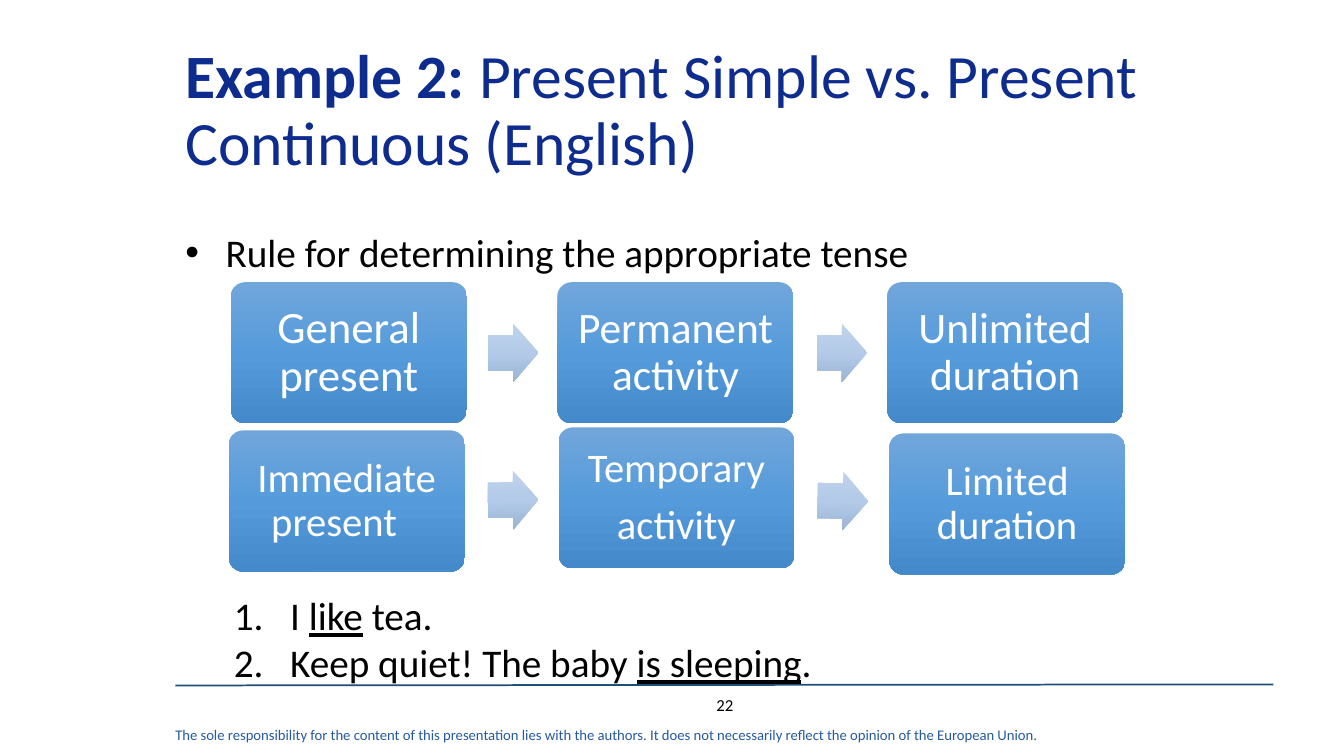
from copy import deepcopy

from lxml import etree
from pptx import Presentation
from pptx.dml.color import RGBColor
from pptx.enum.shapes import MSO_CONNECTOR, MSO_SHAPE
from pptx.enum.text import MSO_ANCHOR, MSO_AUTO_SIZE, PP_ALIGN
from pptx.oxml.ns import qn
from pptx.util import Inches, Pt

ROUND = MSO_SHAPE.ROUNDED_RECTANGLE
ARROW = MSO_SHAPE.RIGHT_ARROW
STRAIGHT = MSO_CONNECTOR.STRAIGHT
TOP, MIDDLE = MSO_ANCHOR.TOP, MSO_ANCHOR.MIDDLE
LEFT, CENTER = PP_ALIGN.LEFT, PP_ALIGN.CENTER
NO_FIT = MSO_AUTO_SIZE.NONE

FONT = "Calibri"
NAVY = RGBColor(0x0E, 0x2C, 0x8E)
RULE = RGBColor(0x1F, 0x4E, 0x79)
NOTE = RGBColor(0x27, 0x5A, 0x9F)
BLACK = RGBColor(0, 0, 0)
WHITE = RGBColor(0xFF, 0xFF, 0xFF)
CARD = [RGBColor(0x71, 0xA6, 0xDB), RGBColor(0x55, 0x9B, 0xDB), RGBColor(0x44, 0x8A, 0xCA)]
PALE = [RGBColor(0xC0, 0xD2, 0xEB), RGBColor(0xB3, 0xCB, 0xE9), RGBColor(0x9B, 0xB4, 0xD3)]

CARD_W, CARD_H = 2.34, 1.4
ARROW_W, ARROW_H = 0.5, 0.58

GENERAL = (
    [(2.29, 2.8, 32, ["General present"]),
     (5.53, 2.8, 31, ["Permanent activity"]),
     (8.8, 2.8, 31, ["Unlimited duration"])],
    [(4.84, 3.21, 0), (8.1, 3.21, 0)],
)
IMMEDIATE = (
    [(2.27, 4.27, 29, ["Immediate present\t"]),
     (5.54, 4.24, 29, ["Temporary", "activity"]),
     (8.82, 4.3, 29, ["Limited duration"])],
    [(4.84, 4.67, -0.6), (8.11, 4.68, 1.1)],
)


def inches(box):
    """Turn a box of numbers into lengths."""
    return [Inches(n) for n in box]


def add_run(para, text, size, color, bold=False, under=False):
    """Add one formatted run to a paragraph."""
    run = para.add_run()
    run.text = text
    font = run.font
    font.name, font.size, font.bold = FONT, Pt(size), bold
    font.underline = under
    font.color.rgb = color


def add_box(slide, box, anchor=TOP):
    """Add a wrapping text box and return its frame."""
    frame = slide.shapes.add_textbox(*inches(box)).text_frame
    frame.word_wrap = True
    frame.vertical_anchor = anchor
    return frame


def add_mark(para, indent, tag, **attrs):
    """Give a paragraph a hanging bullet or number."""
    props = para._p.get_or_add_pPr()
    props.set("marL", str(Inches(indent)))
    props.set("indent", str(-Inches(indent)))
    etree.SubElement(props, qn("a:buFont"), typeface="Arial" if tag == "a:buChar" else FONT)
    etree.SubElement(props, qn(tag), **attrs)


def add_shape(slide, kind, box, colors):
    """Add a preset shape with a vertical gradient."""
    shape = slide.shapes.add_shape(kind, *inches(box))
    shape.shadow.inherit = False
    shape.line.fill.background()
    fill = shape.fill
    fill.gradient()
    fill.gradient_angle = 270
    stops = shape._element.spPr.find(".//" + qn("a:gsLst"))
    stops.insert(1, deepcopy(stops[0]))
    for stop, place, color in zip(fill.gradient_stops, (0, 0.5, 1), colors):
        stop.position = place
        stop.color.rgb = color
    return shape


def add_card(slide, box, size, texts):
    """Add one rounded card with centred text."""
    card = add_shape(slide, ROUND, box, CARD)
    card.adjustments[0] = 0.1
    frame = card.text_frame
    frame.word_wrap = True
    frame.vertical_anchor = MIDDLE
    frame.margin_left = frame.margin_right = Inches(0.12)
    frame.margin_top = frame.margin_bottom = Inches(0.12)
    for i, text in enumerate(texts):
        para = frame.add_paragraph() if i else frame.paragraphs[0]
        para.alignment = CENTER
        para.line_spacing = 0.9
        para.space_after = Pt(round(size * 0.35))
        add_run(para, text, size, WHITE)


def add_flow(slide, cards, arrows):
    """Add a row of cards joined by block arrows."""
    for left, top, size, texts in cards:
        add_card(slide, (left, top, CARD_W, CARD_H), size, texts)
    for left, top, turn in arrows:
        arrow = add_shape(slide, ARROW, (left, top, ARROW_W, ARROW_H), PALE)
        arrow.adjustments[0], arrow.adjustments[1] = 0.6, 0.5
        arrow.rotation = turn


def add_title(slide, box):
    """Place and fill the title."""
    title = slide.shapes.title
    title.left, title.top, title.width, title.height = inches(box)
    frame = title.text_frame
    frame.word_wrap = True
    frame.auto_size = NO_FIT
    frame.vertical_anchor = TOP
    para = frame.paragraphs[0]
    para.alignment = LEFT
    para.line_spacing = 0.9
    add_run(para, "Example 2: ", 44, NAVY, bold=True)
    add_run(para, "Present Simple vs. Present Continuous (English)", 44, NAVY)


def add_rule(slide, box):
    """Add the bulleted lead line."""
    para = add_box(slide, box).paragraphs[0]
    add_mark(para, 0.4, "a:buChar", char="•")
    add_run(para, "Rule for determining the appropriate tense", 28, BLACK)


def add_list(slide, box):
    """Add the numbered sentences with the verbs underlined."""
    frame = add_box(slide, box)
    lines = [("I ", "like", " tea."), ("Keep quiet! The baby ", "is sleeping", ".")]
    for i, parts in enumerate(lines):
        para = frame.add_paragraph() if i else frame.paragraphs[0]
        add_mark(para, 0.56, "a:buAutoNum", type="arabicPeriod")
        for j, part in enumerate(parts):
            add_run(para, part, 28, BLACK, under=j == 1)


def add_footer(slide, left, top):
    """Add the footer line, page number and disclaimer."""
    ends = inches((left, top, left + 10.89, top - 0.01))
    line = slide.shapes.add_connector(STRAIGHT, *ends)
    line.line.color.rgb = RULE
    line.line.width = Pt(1.25)
    etree.SubElement(line._element.spPr, qn("a:effectLst"))
    note = add_box(slide, (left - 0.1, top + 0.36, 8.97, 0.26), MIDDLE)
    add_run(note.paragraphs[0], "The sole responsibility for the content of this presentation "
            "lies with the authors. It does not necessarily reflect the opinion of the "
            "European Union.", 10.5, NOTE)
    page = add_box(slide, (left + 5.15, top - 0.01, 0.6, 0.4), MIDDLE).paragraphs[0]
    page.alignment = CENTER
    add_run(page, "22", 12, BLACK)


def main():
    """Build and save the slide."""
    deck = Presentation()
    deck.slide_width, deck.slide_height = Inches(13.33), Inches(7.5)
    slide = deck.slides.add_slide(deck.slide_layouts[5])
    add_footer(slide, 1.74, 6.8)
    add_flow(slide, *GENERAL)
    add_flow(slide, *IMMEDIATE)
    add_list(slide, (2.22, 5.82, 7.05, 1.04))
    add_title(slide, (1.74, 0.4, 9.66, 1.45))
    add_rule(slide, (1.74, 2.22, 8.43, 0.57))
    deck.save("out.pptx")


if __name__ == "__main__":
    main()
